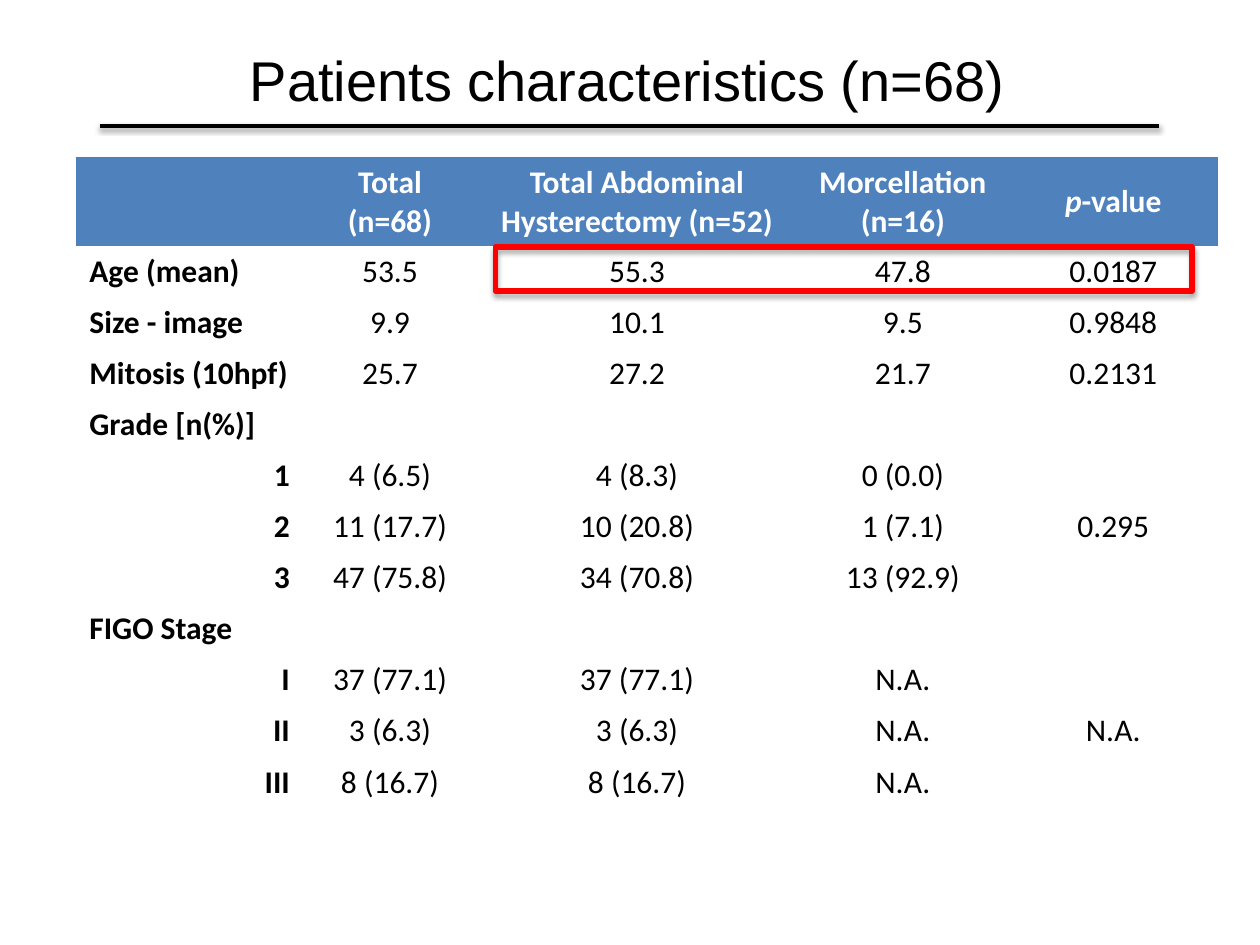
from lxml.etree import SubElement
from pptx import Presentation
from pptx.dml.color import RGBColor
from pptx.enum.shapes import MSO_CONNECTOR, MSO_SHAPE
from pptx.enum.text import MSO_ANCHOR, MSO_AUTO_SIZE, PP_ALIGN
from pptx.oxml.ns import qn
from pptx.util import Pt

BLACK, WHITE, RED = "000000", "FFFFFF", "FF0000"
HEADER_FILL, HEADER_EDGE = "4F81BD", "4B7EBC"
NO_STYLE = "{2D5ABB26-0587-4C30-8999-92F81FD0307C}"
COLUMNS = [128.9, 100.1, 182.2, 121.7, 118.8]
HEADER_HEIGHT, ROW_HEIGHT = 50.4, 29.2
HEADINGS = ["", "Total (n=68)", "Total Abdominal Hysterectomy (n=52)",
            "Morcellation (n=16)", "p-value"]
ROWS = [
    ["Age (mean)", "53.5", "55.3", "47.8", "0.0187"],
    ["Size - image", "9.9", "10.1", "9.5", "0.9848"],
    ["Mitosis (10hpf)", "25.7", "27.2", "21.7", "0.2131"],
    ["Grade [n(%)]", "", "", "", ""],
    ["1", "4 (6.5)", "4 (8.3)", "0 (0.0)", ""],
    ["2", "11 (17.7)", "10 (20.8)", "1 (7.1)", "0.295"],
    ["3", "47 (75.8)", "34 (70.8)", "13 (92.9)", ""],
    ["FIGO Stage", "", "", "", ""],
    ["I", "37 (77.1)", "37 (77.1)", "N.A.", ""],
    ["II", "3 (6.3)", "3 (6.3)", "N.A.", "N.A."],
    ["III", "8 (16.7)", "8 (16.7)", "N.A.", ""],
]
SUBROWS = {"1", "2", "3", "I", "II", "III"}


def rgb(value):
    """Turn a hex string into a colour."""
    return RGBColor.from_string(value)


def add_run(p, text, size, font, color, bold=False, italic=False):
    """Add one formatted run to a paragraph."""
    r = p.add_run()
    r.text = text
    r.font.size, r.font.name = Pt(size), font
    r.font.bold, r.font.italic = bold, italic
    r.font.color.rgb = rgb(color)


def add_shadow(sp, alpha, distance):
    """Give a shape or connector a soft shadow straight below it."""
    effects = SubElement(sp._element.spPr, qn("a:effectLst"))
    shadow = SubElement(effects, qn("a:outerShdw"), blurRad=str(Pt(3.1)),
                        dist=str(Pt(distance)), dir="5400000", rotWithShape="0")
    color = SubElement(shadow, qn("a:srgbClr"), val=BLACK)
    SubElement(color, qn("a:alpha"), val=str(alpha * 1000))


def add_title(s, x, y, w, h):
    """Place the title and the rule below it."""
    title = s.shapes.title
    title.left, title.top, title.width, title.height = Pt(x), Pt(y), Pt(w), Pt(h)
    tf = title.text_frame
    tf.word_wrap, tf.auto_size = True, MSO_AUTO_SIZE.SHAPE_TO_FIT_TEXT
    tf.vertical_anchor = MSO_ANCHOR.TOP
    p = tf.paragraphs[0]
    p.alignment, p.line_spacing = PP_ALIGN.CENTER, 0.8
    add_run(p, "Patients characteristics (n=68)", 32, "Arial", BLACK)
    rule_y = Pt(y + h + 2)
    rule = s.shapes.add_connector(MSO_CONNECTOR.STRAIGHT, Pt(x + 36), rule_y,
                                  Pt(x + w - 34), rule_y)
    rule.line.color.rgb, rule.line.width = rgb(BLACK), Pt(2)
    add_shadow(rule, 38, 1.6)


def add_border(cell, side):
    """Draw a thin header border on one side of a cell."""
    tcPr = cell._tc.get_or_add_tcPr()
    line = SubElement(tcPr, qn(f"a:ln{side}"), w=str(Pt(0.75)))
    fill = SubElement(line, qn("a:solidFill"))
    SubElement(fill, qn("a:srgbClr"), val=HEADER_EDGE)


def fill_header(cells):
    """Write and colour the heading row."""
    last = len(HEADINGS) - 1
    for i, (cell, text) in enumerate(zip(cells, HEADINGS)):
        for side in ("L" if i == 0 else "") + ("R" if i == last else "") + "T":
            add_border(cell, side)
        cell.fill.solid()
        cell.fill.fore_color.rgb = rgb(HEADER_FILL)
        cell.vertical_anchor = MSO_ANCHOR.MIDDLE
        p = cell.text_frame.paragraphs[0]
        p.alignment = PP_ALIGN.CENTER
        if i == last:
            add_run(p, text[0], 18, "Calibri", WHITE, bold=True, italic=True)
            text = text[1:]
        if text:
            add_run(p, text, 18, "Calibri", WHITE, bold=True)


def fill_row(cells, values):
    """Write one row of patient data."""
    for i, (cell, text) in enumerate(zip(cells, values)):
        cell.fill.background()
        p = cell.text_frame.paragraphs[0]
        if i:
            p.alignment = PP_ALIGN.CENTER
        else:
            p.alignment = PP_ALIGN.RIGHT if text in SUBROWS else PP_ALIGN.LEFT
        if text:
            add_run(p, text, 18, "Calibri", BLACK, bold=i == 0)


def add_patient_table(s, x, y):
    """Place the table of patient characteristics."""
    height = HEADER_HEIGHT + ROW_HEIGHT * len(ROWS)
    table = s.shapes.add_table(len(ROWS) + 1, len(COLUMNS), Pt(x), Pt(y),
                               Pt(sum(COLUMNS)), Pt(height)).table
    table._tbl.tblPr.find(qn("a:tableStyleId")).text = NO_STYLE
    table.horz_banding = False
    for column, width in zip(table.columns, COLUMNS):
        column.width = Pt(width)
    for i, row in enumerate(table.rows):
        row.height = Pt(ROW_HEIGHT if i else HEADER_HEIGHT)
        if i:
            fill_row(row.cells, ROWS[i - 1])
        else:
            fill_header(row.cells)


def add_highlight(s, x, y, w, h):
    """Frame the significant age values."""
    sp = s.shapes.add_shape(MSO_SHAPE.RECTANGLE, Pt(x), Pt(y), Pt(w), Pt(h))
    sp.fill.background()
    sp.line.color.rgb, sp.line.width = rgb(RED), Pt(3)
    add_shadow(sp, 35, 1.8)


def main():
    """Build the slide and save it."""
    prs = Presentation()
    prs.slide_width, prs.slide_height = Pt(720), Pt(540)
    s = prs.slides.add_slide(prs.slide_layouts[5])
    add_title(s, 21, 30, 675.4, 40)
    add_patient_table(s, 43.9, 90)
    add_highlight(s, 283, 141.1, 398.2, 25.2)
    prs.save("out.pptx")


if __name__ == "__main__":
    main()
